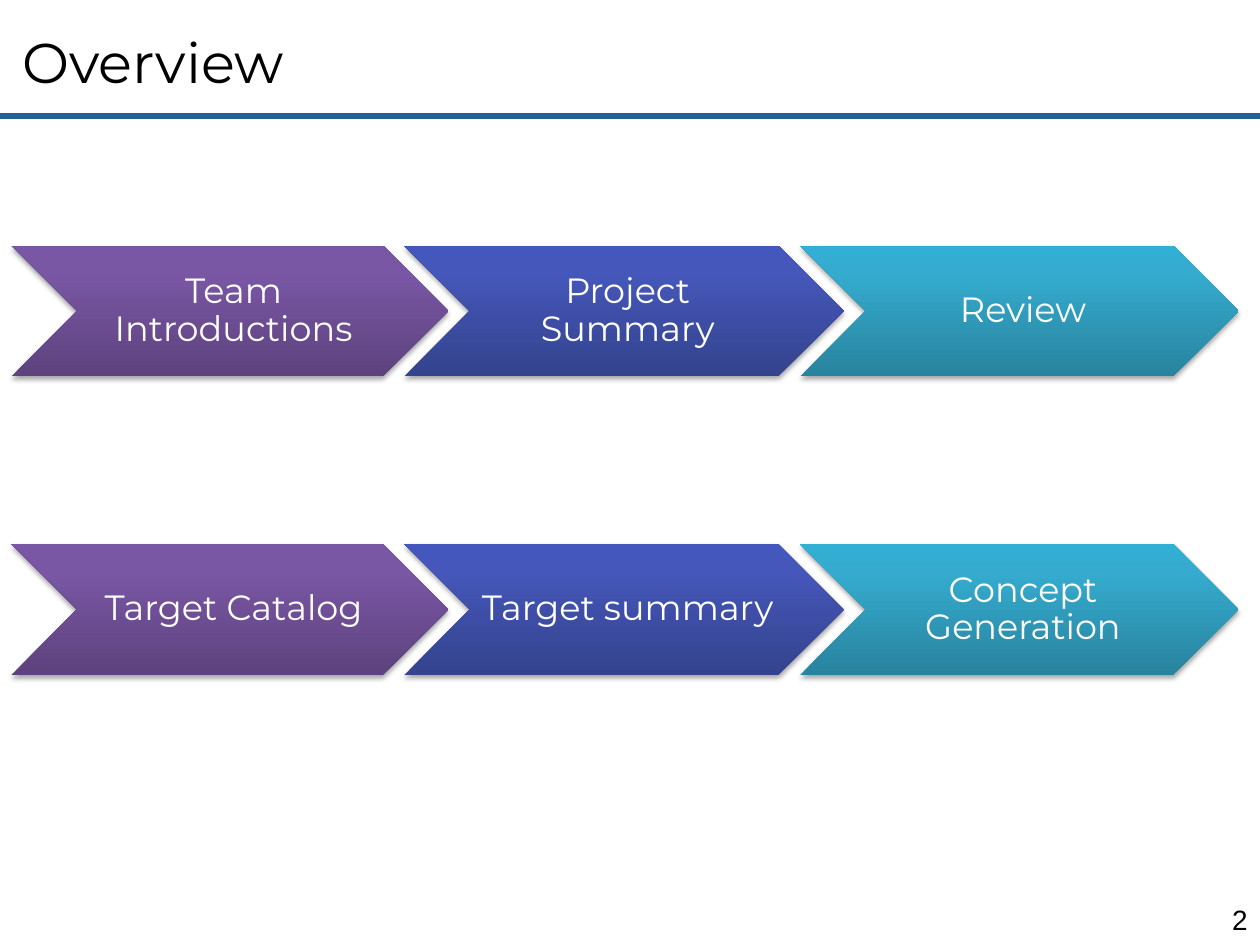
from pptx import Presentation
from pptx.dml.color import RGBColor
from pptx.enum.shapes import MSO_CONNECTOR, MSO_SHAPE
from pptx.enum.text import MSO_ANCHOR, PP_ALIGN
from pptx.oxml import parse_xml
from pptx.oxml.ns import nsdecls
from pptx.util import Cm, Pt

BLACK = RGBColor(0x00, 0x00, 0x00)
WHITE = RGBColor(0xFF, 0xFF, 0xFF)
RULE_BLUE = RGBColor(0x23, 0x61, 0x92)
PURPLES = [RGBColor(0x5D, 0x42, 0x7D), RGBColor(0x7A, 0x57, 0xA5), RGBColor(0x7A, 0x56, 0xA7)]
INDIGOS = [RGBColor(0x34, 0x43, 0x8D), RGBColor(0x45, 0x57, 0xBA), RGBColor(0x43, 0x57, 0xBD)]
TEALS = [RGBColor(0x28, 0x83, 0x9E), RGBColor(0x35, 0xAC, 0xCF), RGBColor(0x31, 0xAF, 0xD4)]
STOPS = [0, 80, 100]

COLUMNS = [(0.23, 8.81, PURPLES), (8.15, 8.86, INDIGOS), (16.13, 8.84, TEALS)]
ROWS = [
    (4.95, ["Team Introductions", "Project Summary", "Review"]),
    (10.97, ["Target Catalog", "Target summary", "Concept Generation"]),
]
CHEVRON_HEIGHT = 2.64
RULE_TOP = 2.33

LABELS = [
    ("Overview", (0.2, 0.43, 10.16, 1.63), "Montserrat", 32, PP_ALIGN.LEFT, MSO_ANCHOR.TOP),
    ("2", (24.13, 18.03, 1.27, 1.02), "Arial", 16, PP_ALIGN.RIGHT, MSO_ANCHOR.MIDDLE),
]


def write_text(shape, text, font_name, size, color, align, anchor, spacing=1.0):
    frame = shape.text_frame
    frame.word_wrap = True
    frame.vertical_anchor = anchor
    paragraph = frame.paragraphs[0]
    paragraph.text = text
    paragraph.alignment = align
    paragraph.line_spacing = spacing
    paragraph.font.name = font_name
    paragraph.font.size = Pt(size)
    paragraph.font.color.rgb = color


def add_label(slide, text, box, font_name, size, align, anchor):
    shape = slide.shapes.add_textbox(*map(Cm, box))
    write_text(shape, text, font_name, size, BLACK, align, anchor)


def add_rule(slide, width):
    rule = slide.shapes.add_connector(MSO_CONNECTOR.STRAIGHT, 0, Cm(RULE_TOP), width, Cm(RULE_TOP))
    rule.line.color.rgb = RULE_BLUE
    rule.line.width = Pt(3.5)
    rule._element.spPr.append(parse_xml(f"<a:effectLst {nsdecls('a')}/>"))


def style_chevron(shape, colors):
    stops = "".join(
        f'<a:gs pos="{stop * 1000}"><a:srgbClr val="{color}"/></a:gs>'
        for stop, color in zip(STOPS, colors)
    )
    properties = shape._element.spPr
    properties.append(parse_xml(
        f"<a:gradFill {nsdecls('a')} rotWithShape=\"1\"><a:gsLst>{stops}</a:gsLst>"
        '<a:lin ang="16200000" scaled="0"/></a:gradFill>'
    ))
    shape.line.fill.background()
    properties.append(parse_xml(
        f"<a:effectLst {nsdecls('a')}>"
        f'<a:outerShdw blurRad="{Pt(3.1)}" dist="{Pt(1.8)}" dir="5400000" rotWithShape="0">'
        f'<a:srgbClr val="{BLACK}"><a:alpha val="35000"/></a:srgbClr>'
        "</a:outerShdw></a:effectLst>"
    ))


def add_chevron(slide, text, left, top, width, colors):
    shape = slide.shapes.add_shape(
        MSO_SHAPE.CHEVRON, Cm(left), Cm(top), Cm(width), Cm(CHEVRON_HEIGHT)
    )
    shape.adjustments[0] = 0.5
    style_chevron(shape, colors)
    frame = shape.text_frame
    frame.margin_left = Cm(0.22)
    frame.margin_top = frame.margin_right = frame.margin_bottom = Cm(0.07)
    write_text(shape, text, "Montserrat", 20, WHITE, PP_ALIGN.CENTER, MSO_ANCHOR.MIDDLE, 0.9)


def main():
    presentation = Presentation()
    presentation.slide_width = Cm(25.4)
    presentation.slide_height = Cm(19.05)
    slide = presentation.slides.add_slide(presentation.slide_layouts[6])
    add_rule(slide, presentation.slide_width)
    for label in LABELS:
        add_label(slide, *label)
    for top, steps in ROWS:
        for text, (left, width, colors) in zip(steps, COLUMNS):
            add_chevron(slide, text, left, top, width, colors)
    presentation.save("out.pptx")


if __name__ == "__main__":
    main()
